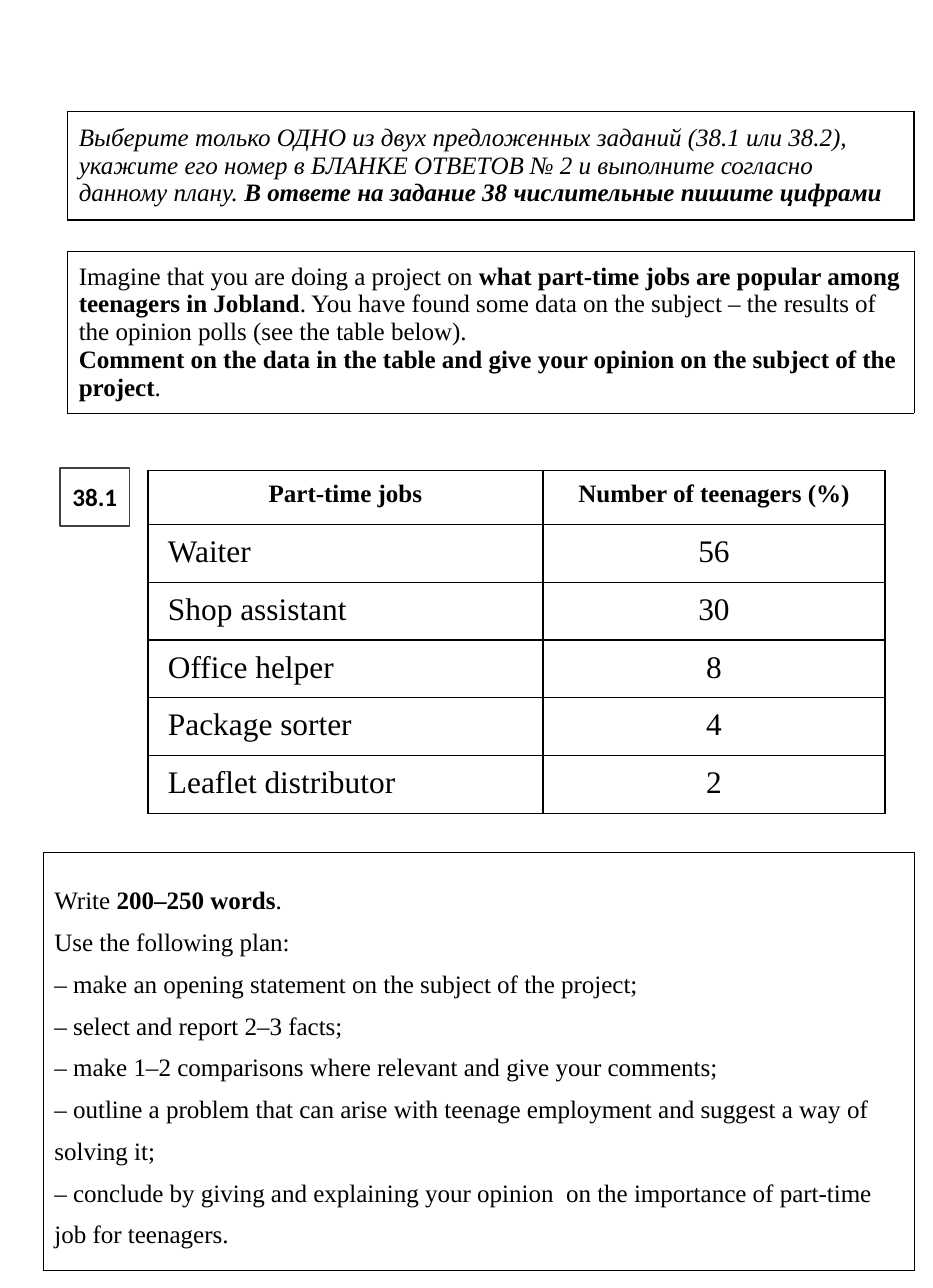
"""Build an exam task sheet with instruction boxes, a survey table and a writing plan."""
from lxml.etree import SubElement
from pptx import Presentation
from pptx.dml.color import RGBColor
from pptx.enum.shapes import MSO_SHAPE
from pptx.enum.text import MSO_ANCHOR, PP_ALIGN
from pptx.oxml.ns import qn
from pptx.util import Cm, Pt

THEME = {
    "serif": "Times New Roman",
    "sans": "Calibri",
    "ink": RGBColor(0, 0, 0),
    "paper": RGBColor(255, 255, 255),
    "badge_line": RGBColor(64, 64, 64),
    "body_size": Pt(16),
    "data_size": Pt(20),
    "thin": Pt(0.5),
    "thick": Pt(1),
}
PLAIN = {"name": THEME["serif"], "size": THEME["body_size"], "bold": False, "italic": False}
BOLD = PLAIN | {"bold": True}
ITALIC = PLAIN | {"italic": True}
BOLD_ITALIC = BOLD | {"italic": True}
DATA = PLAIN | {"size": THEME["data_size"]}
BADGE = BOLD | {"name": THEME["sans"]}

SLIDE_SIZE = (21, 29)
TEXT_BOXES = [
    {
        "place": (1.52, 2.51, 19.05, 2.44),
        "border": THEME["thick"],
        "spacing": 1.0,
        "lines": [
            [("Выберите только ОДНО из двух предложенных заданий (38.1 или 38.2),", ITALIC)],
            [
                ("укажите его номер в БЛАНКЕ ОТВЕТОВ № 2 и выполните согласно данному плану. ", ITALIC),
                ("В ответе на задание 38 числительные пишите цифрами", BOLD_ITALIC),
            ],
        ],
    },
    {
        "place": (1.52, 5.66, 19.05, 3.64),
        "border": THEME["thin"],
        "spacing": 1.0,
        "lines": [
            [
                ("Imagine that you are doing a project on ", PLAIN),
                ("what part-time jobs are popular among teenagers in Jobland", BOLD),
                (". You have found some data on the subject – the results of the opinion polls "
                 "(see the table below).", PLAIN),
            ],
            [
                ("Comment on the data in the table and give your opinion on the subject of the project", BOLD),
                (".", PLAIN),
            ],
        ],
    },
    {
        "place": (0.97, 19.2, 19.61, 9.4),
        "border": THEME["thin"],
        "spacing": 1.5,
        "lines": [
            [("Write ", PLAIN), ("200–250 words", BOLD), (".", PLAIN)],
            [("Use the following plan:", PLAIN)],
            [("– make an opening statement on the subject of the project;", PLAIN)],
            [("– select and report 2–3 facts;", PLAIN)],
            [("– make 1–2 comparisons where relevant and give your comments;", PLAIN)],
            [("– outline a problem that can arise with teenage employment and suggest a way of "
              "solving it;", PLAIN)],
            [("– conclude by giving and explaining your opinion  on the importance of part-time "
              "job for teenagers.", PLAIN)],
        ],
    },
]
TASK_NUMBER = "38.1"
TASK_PLACE = (1.35, 10.54, 1.57, 1.3)
SURVEY = [
    ("Part-time jobs", "Number of teenagers (%)"),
    ("Waiter", "56"),
    ("Shop assistant", "30"),
    ("Office helper", "8"),
    ("Package sorter", "4"),
    ("Leaflet distributor", "2"),
]
SURVEY_ORIGIN = (3.33, 10.59)
SURVEY_COLUMNS = (8.89, 7.7)
HEADER_HEIGHT, DATA_HEIGHT = 1.22, 1.3
SURVEY_MARGINS = {
    "margin_left": Cm(0.45), "margin_right": Cm(0.45),
    "margin_top": Cm(0.23), "margin_bottom": Cm(0.23),
}


def set_attributes(target, values):
    """Set every named attribute on the target."""
    for name, value in values.items():
        setattr(target, name, value)


def write_lines(paragraph, lines):
    """Fill a paragraph with formatted runs, breaking between lines."""
    for index, line in enumerate(lines):
        if index:
            paragraph.add_line_break()
        for text, style in line:
            run = paragraph.add_run()
            run.text = text
            set_attributes(run.font, style)
            run.font.color.rgb = THEME["ink"]


def draw_borders(cell, width):
    """Outline all four sides of a cell and clear its fill."""
    properties = cell._tc.get_or_add_tcPr()
    for side in ("a:lnL", "a:lnR", "a:lnT", "a:lnB"):
        line = SubElement(properties, qn(side), w=str(width))
        fill = SubElement(line, qn("a:solidFill"))
        SubElement(fill, qn("a:srgbClr"), val=str(THEME["ink"]))
    cell.fill.background()


def add_plain_table(slide, place, rows, columns, border):
    """Add an unstyled table with black borders."""
    table = slide.shapes.add_table(rows, columns, *map(Cm, place)).table
    set_attributes(table, {"first_row": False, "horz_banding": False})
    for cell in table.iter_cells():
        draw_borders(cell, border)
    return table


def add_text_box(slide, box):
    """Add a framed block of instructions."""
    cell = add_plain_table(slide, box["place"], 1, 1, box["border"]).cell(0, 0)
    cell.vertical_anchor = MSO_ANCHOR.MIDDLE
    paragraph = cell.text_frame.paragraphs[0]
    paragraph.line_spacing = box["spacing"]
    write_lines(paragraph, box["lines"])


def add_task_badge(slide):
    """Add the framed task number."""
    badge = slide.shapes.add_shape(MSO_SHAPE.RECTANGLE, *map(Cm, TASK_PLACE))
    badge.shadow.inherit = False
    badge.fill.solid()
    badge.fill.fore_color.rgb = THEME["paper"]
    badge.line.color.rgb = THEME["badge_line"]
    badge.line.width = THEME["thick"]
    set_attributes(badge.text_frame, {
        "vertical_anchor": MSO_ANCHOR.MIDDLE, "margin_left": 0, "margin_right": 0,
    })
    paragraph = badge.text_frame.paragraphs[0]
    paragraph.alignment = PP_ALIGN.CENTER
    write_lines(paragraph, [[(TASK_NUMBER, BADGE)]])


def add_survey(slide):
    """Add the table of survey results."""
    heights = [HEADER_HEIGHT] + [DATA_HEIGHT] * (len(SURVEY) - 1)
    place = (*SURVEY_ORIGIN, sum(SURVEY_COLUMNS), sum(heights))
    table = add_plain_table(slide, place, len(SURVEY), len(SURVEY_COLUMNS), THEME["thick"])
    for column, width in zip(table.columns, SURVEY_COLUMNS):
        column.width = Cm(width)
    for row_index, (entries, height) in enumerate(zip(SURVEY, heights)):
        table.rows[row_index].height = Cm(height)
        for column_index, text in enumerate(entries):
            cell = table.cell(row_index, column_index)
            set_attributes(cell, SURVEY_MARGINS)
            paragraph = cell.text_frame.paragraphs[0]
            is_job = row_index > 0 and column_index == 0
            paragraph.alignment = PP_ALIGN.LEFT if is_job else PP_ALIGN.CENTER
            write_lines(paragraph, [[(text, DATA if row_index else BOLD)]])


def main():
    """Build and save the sheet."""
    presentation = Presentation()
    presentation.slide_width, presentation.slide_height = map(Cm, SLIDE_SIZE)
    slide = presentation.slides.add_slide(presentation.slide_layouts[6])
    for box in TEXT_BOXES:
        add_text_box(slide, box)
    add_task_badge(slide)
    add_survey(slide)
    presentation.save("out.pptx")


if __name__ == "__main__":
    main()
